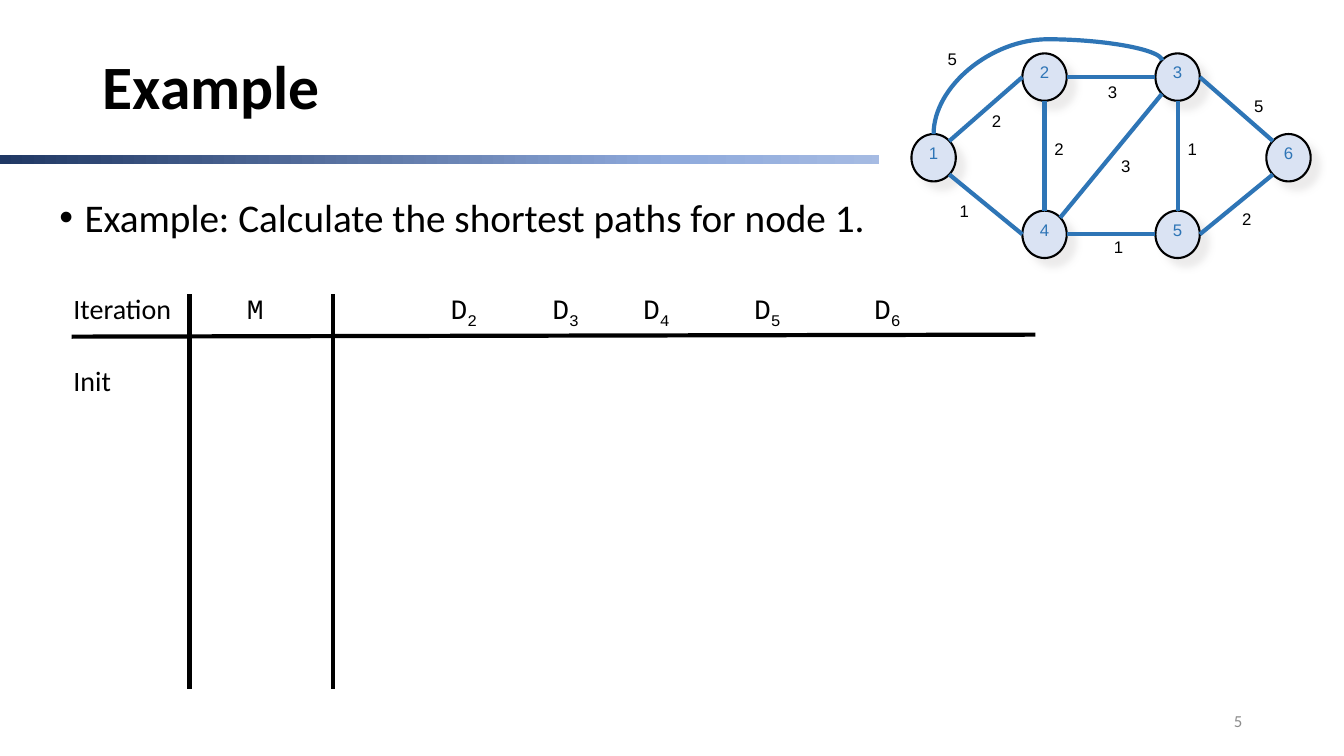
import math
import lxml.etree
import pptx
import pptx.dml.color
import pptx.enum.shapes
import pptx.enum.text
import pptx.oxml.ns
import pptx.util

Inches = pptx.util.Inches
Pt = pptx.util.Pt
qn = pptx.oxml.ns.qn
SHAPE = pptx.enum.shapes.MSO_SHAPE
LINE = pptx.enum.shapes.MSO_CONNECTOR
ALIGN = pptx.enum.text.PP_ALIGN
ANCHOR = pptx.enum.text.MSO_ANCHOR

BLACK, BLUE, PALE, WHITE = "000000", "2E75B6", "DAE3F3", "FFFFFF"
NODE_WIDTH, NODE_HEIGHT = 0.44, 0.47
TOP, TOP_LEFT, LEFT, BOTTOM_LEFT, BOTTOM, BOTTOM_RIGHT, RIGHT, TOP_RIGHT = range(8)


def color(value):
    return pptx.dml.color.RGBColor.from_string(value)


def add_xml(parent, tag, **attributes):
    return lxml.etree.SubElement(parent, qn(tag), attributes)


def add_run(para, text, size, font="Calibri", tint=BLACK, bold=False):
    run = para.add_run()
    run.text = text
    run.font.size = Pt(size)
    run.font.name = font
    run.font.bold = bold
    run.font.color.rgb = color(tint)
    return run


def set_frame(frame, anchor, wrap=True, top=0.05, bottom=0.05):
    frame.word_wrap = wrap
    frame.vertical_anchor = anchor
    frame.margin_left = frame.margin_right = Inches(0.1)
    frame.margin_top, frame.margin_bottom = Inches(top), Inches(bottom)
    return frame.paragraphs[0]


def add_text(page, box, anchor=ANCHOR.TOP, **frame_options):
    shape = page.shapes.add_textbox(*map(Inches, box))
    return shape.text_frame, set_frame(shape.text_frame, anchor, **frame_options)


def add_shape(page, kind, box, fill):
    shape = page.shapes.add_shape(kind, *map(Inches, box))
    shape.shadow.inherit = False
    shape.fill.solid()
    shape.fill.fore_color.rgb = color(fill)
    shape.line.fill.background()
    return shape


def add_line(page, start, end, tint, kind=LINE.STRAIGHT):
    line = page.shapes.add_connector(kind, *map(Inches, (*start, *end)))
    line.line.color.rgb = color(tint)
    line.line.width = Pt(3)
    add_xml(line._element.spPr, "a:effectLst")
    return line


def draw_backdrop(page, box):
    left, top, width, height = box
    bar = add_shape(page, SHAPE.RECTANGLE, (left, top + 1.54, width, 0.09), PALE)
    bar.fill.gradient()
    bar.fill.gradient_angle = 0
    stops = bar._element.spPr.find(qn("a:gradFill")).find(qn("a:gsLst"))
    for stop in list(stops):
        stops.remove(stop)
    for percent, tint in ((0, "203864"), (50, "8FAADC"), (100, PALE)):
        stop = add_xml(stops, "a:gs", pos=str(percent * 1000))
        add_xml(stop, "a:srgbClr", val=tint)
    add_shape(page, SHAPE.RECTANGLE, (left + 8.72, top + 0.56, width - 8.72, 1.67), WHITE)


def draw_title(page, box):
    frame, para = add_text(page, box, ANCHOR.MIDDLE)
    para.line_spacing = 0.9
    add_run(para, "Example", 44, bold=True)


def draw_task(page, box):
    frame, para = add_text(page, box)
    para.line_spacing = 0.8
    para.space_before = Pt(10)
    properties = para._p.get_or_add_pPr()
    properties.set("marL", str(Inches(0.25)))
    properties.set("indent", str(-Inches(0.25)))
    add_xml(properties, "a:buFont", typeface="Arial")
    add_xml(properties, "a:buChar", char="•")
    add_run(para, "Example: Calculate the shortest paths for node 1.", 28)


def draw_iterations(page, box):
    left, top, width, height = box
    frame, header = add_text(page, box)
    tabs = add_xml(header._p.get_or_add_pPr(), "a:tabLst")
    for position in (1.72, 3.74, 4.75, 5.65, 6.75, 7.94):
        add_xml(tabs, "a:tab", pos=str(Inches(position)), algn="l")
    add_run(header, "Iteration", 20)
    add_run(header, "\tM", 20, "Courier New")
    for node in "23456":
        add_run(header, "\tD", 20, "Courier New")
        index = add_run(header, node, 20, "Courier New")
        index.font._element.set("baseline", "-25000")
    first = frame.add_paragraph()
    first.space_before = Pt(24)
    add_run(first, "Init", 20)

    add_line(page, (left + 0.08, top + 0.5), (left + 9.64, top + 0.48), BLACK)
    for x in (left + 1.25, left + 2.67):
        add_line(page, (x, top + 0.08), (x, top + height + 0.08), BLACK)


def add_node(page, name, x, y):
    node = add_shape(page, SHAPE.OVAL, (x, y, NODE_WIDTH, NODE_HEIGHT), PALE)
    node.line.color.rgb = color(BLACK)
    node.line.width = Pt(1.5)
    effects = node._element.spPr.find(qn("a:effectLst"))
    shadow = add_xml(effects, "a:outerShdw", blurRad=str(Pt(5)), dist=str(Pt(8.5)),
                     dir="2700000", algn="ctr", rotWithShape="0")
    tint = add_xml(shadow, "a:srgbClr", val="E7E6E6")
    add_xml(tint, "a:alpha", val="75000")
    para = set_frame(node.text_frame, ANCHOR.MIDDLE, wrap=False, top=0.15, bottom=0.25)
    para.alignment = ALIGN.CENTER
    add_run(para, name, 12, "Arial", BLUE)
    return node


def site_point(node, site):
    angle = math.radians(90 + 45 * site)
    x = node.left.inches + NODE_WIDTH / 2 * (1 + math.cos(angle))
    y = node.top.inches + NODE_HEIGHT / 2 * (1 - math.sin(angle))
    return x, y


def glue(line, start, start_site, end, end_site):
    properties = line._element.nvCxnSpPr.cNvCxnSpPr
    for tag, node, site in (("a:stCxn", start, start_site), ("a:endCxn", end, end_site)):
        add_xml(properties, tag, id=str(node.shape_id), idx=str(site))


def add_arc(page, start, end):
    (x1, y1), (x2, y2) = start, end
    middle_x, middle_y = (x1 + x2) / 2, (y1 + y2) / 2
    half_width, half_height = abs(y2 - y1) / 2, abs(x2 - x1) / 2
    arc = add_line(page, (middle_x - half_width, middle_y - half_height),
                   (middle_x + half_width, middle_y + half_height), BLUE, LINE.CURVE)
    properties = arc._element.spPr
    properties.find(qn("a:xfrm")).set("rot", str(270 * 60000))
    geometry = properties.find(qn("a:prstGeom"))
    adjustments = geometry.find(qn("a:avLst"))
    if adjustments is None:
        adjustments = add_xml(geometry, "a:avLst")
    add_xml(adjustments, "a:gd", name="adj1", fmla="val 128700")
    return arc


def draw_graph(page, box):
    left, top = box[:2]
    places = {"1": (0, 0.8), "2": (1.1, 0), "3": (2.42, 0),
              "4": (1.1, 1.56), "5": (2.42, 1.56), "6": (3.52, 0.8)}
    nodes = {name: add_node(page, name, left + x, top + y) for name, (x, y) in places.items()}
    edges = (
        ("1", TOP_RIGHT, "2", LEFT, "2", 0.7, 0.52),
        ("1", BOTTOM_RIGHT, "4", LEFT, "1", 0.38, 1.41),
        ("3", LEFT, "2", RIGHT, "3", 1.85, 0.23),
        ("5", LEFT, "4", RIGHT, "1", 1.91, 1.77),
        ("6", BOTTOM_LEFT, "5", RIGHT, "2", 3.18, 1.49),
        ("3", RIGHT, "6", TOP_LEFT, "5", 3.3, 0.37),
        ("3", BOTTOM_LEFT, "4", TOP_RIGHT, "3", 1.98, 0.97),
        ("2", BOTTOM, "4", TOP, "2", 1.32, 0.8),
        ("3", BOTTOM, "5", TOP, "1", 2.64, 0.8),
        ("1", TOP, "3", TOP_LEFT, "5", 0.26, -0.1),
    )
    for start, start_site, end, end_site, cost, x, y in edges:
        ends = site_point(nodes[start], start_site), site_point(nodes[end], end_site)
        curved = start_site == TOP
        line = add_arc(page, *ends) if curved else add_line(page, *ends, BLUE)
        glue(line, nodes[start], start_site, nodes[end], end_site)
        frame, para = add_text(page, (left + x, top + y, 0.29, 0.5), wrap=False, bottom=0.25)
        add_run(para, cost, 12, "Arial")


def draw_page_number(page, box):
    frame, para = add_text(page, box, ANCHOR.MIDDLE)
    para.alignment = ALIGN.RIGHT
    add_run(para, "5", 12, tint="8C8C8C")


def main():
    deck = pptx.Presentation()
    deck.slide_width, deck.slide_height = Inches(13.33), Inches(7.5)
    page = deck.slides.add_slide(deck.slide_layouts[6])
    draw_backdrop(page, (0, 0, 13.33, 7.5))
    draw_title(page, (0.92, 0.4, 11.5, 0.97))
    draw_task(page, (0.49, 1.96, 9.75, 0.52))
    draw_iterations(page, (0.63, 2.84, 10.81, 3.92))
    draw_graph(page, (9.04, 0.53, 3.96, 2.03))
    draw_page_number(page, (9.42, 6.95, 3, 0.4))
    deck.save("out.pptx")


if __name__ == "__main__":
    main()
